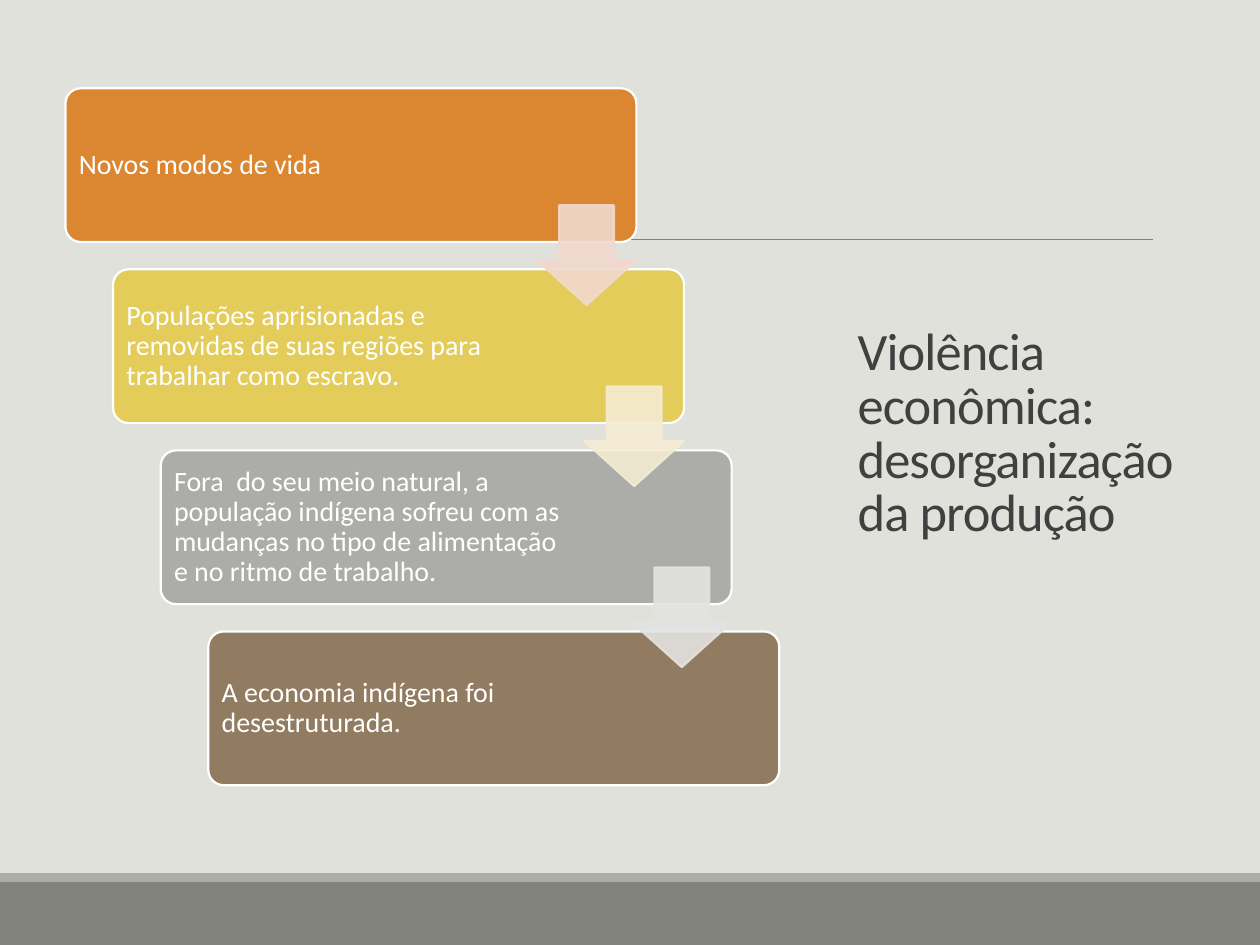
import pptx
import pptx.util
import pptx.dml.color
import pptx.enum.shapes
import pptx.enum.text
import pptx.oxml.ns
from lxml import etree

Cm, Pt = pptx.util.Cm, pptx.util.Pt
RGBColor = pptx.dml.color.RGBColor
SHAPE = pptx.enum.shapes.MSO_SHAPE
qn = pptx.oxml.ns.qn

PAPER = RGBColor(0xE1, 0xE1, 0xDB)
FOOTER = RGBColor(0x82, 0x84, 0x7C)
GRAY = RGBColor(0xAC, 0xAD, 0xA8)
RULE = RGBColor(0x80, 0x80, 0x80)
INK = RGBColor(0x40, 0x40, 0x40)
WHITE = RGBColor(0xFF, 0xFF, 0xFF)
ORANGE = RGBColor(0xDB, 0x86, 0x31)
YELLOW = RGBColor(0xE3, 0xCC, 0x5A)
BROWN = RGBColor(0x92, 0x7C, 0x61)
PALE_ORANGE = RGBColor(0xF1, 0xD9, 0xCE)
PALE_YELLOW = RGBColor(0xF4, 0xEC, 0xD2)
PALE_GRAY = RGBColor(0xE3, 0xE3, 0xE1)


class Deck:
    """Slide style and the current slide; lengths are in centimetres."""
    font = "Calibri"
    outline = 1.25

    def __init__(self, s):
        self.s = s
        s.background.fill.solid()
        s.background.fill.fore_color.rgb = PAPER

    def shape(self, kind, x, y, w, h, fill, line=None, adj=(), alpha=None):
        sp = self.s.shapes.add_shape(kind, Cm(x), Cm(y), Cm(w), Cm(h))
        sp.shadow.inherit = False
        for i, value in enumerate(adj):
            sp.adjustments[i] = value
        sp.fill.solid()
        sp.fill.fore_color.rgb = fill
        if line is None:
            sp.line.fill.background()
        else:
            sp.line.color.rgb = line
            sp.line.width = Pt(self.outline)
        if alpha is not None:
            for clr in sp._element.spPr.iter(qn("a:srgbClr")):
                etree.SubElement(clr, qn("a:alpha"), val=str(alpha * 1000))
        return sp

    def line(self, x1, y1, x2, y2, color, width):
        cn = self.s.shapes.add_connector(
            pptx.enum.shapes.MSO_CONNECTOR.STRAIGHT, Cm(x1), Cm(y1), Cm(x2), Cm(y2))
        cn.line.color.rgb = color
        cn.line.width = Pt(width)
        etree.SubElement(cn._element.spPr, qn("a:effectLst"))

    def text(self, x, y, w, h, text, size, color, leading, inset=None, spc=None):
        tf = self.s.shapes.add_textbox(Cm(x), Cm(y), Cm(w), Cm(h)).text_frame
        tf.word_wrap = True
        tf.vertical_anchor = pptx.enum.text.MSO_ANCHOR.MIDDLE
        if inset is not None:
            tf.margin_left = tf.margin_right = Cm(inset)
            tf.margin_top = tf.margin_bottom = Cm(inset)
        p = tf.paragraphs[0]
        p.line_spacing = leading
        r = p.add_run()
        r.text = text
        r.font.name = self.font
        r.font.size = Pt(size)
        r.font.color.rgb = color
        if spc is not None:
            r._r.get_or_add_rPr().set("spc", str(int(spc * 100)))


# Steps: text, card colour, text width, colour of the arrow to the next step
STEPS = [
    ("Novos modos de vida", ORANGE, 7.92, PALE_ORANGE),
    ("Populações aprisionadas e removidas de suas regiões para trabalhar como escravo.",
     YELLOW, 8.36, PALE_YELLOW),
    ("Fora  do seu meio natural, a população indígena sofreu com as mudanças "
     "no tipo de alimentação e no ritmo de trabalho.", GRAY, 8.38, PALE_GRAY),
    ("A economia indígena foi desestruturada.", BROWN, 8.36, None),
]
LEFT, TOP = 1.32, 1.78
STEP_X, STEP_Y = 0.96, 3.65
CARD_W, CARD_H = 11.51, 3.1
PAD = 0.1
ARROW = 2.01


def main():
    prs = pptx.Presentation()
    prs.slide_width, prs.slide_height = Cm(25.4), Cm(19.05)
    d = Deck(prs.slides.add_slide(prs.slide_layouts[6]))

    # Footer bands and rule
    d.shape(SHAPE.RECTANGLE, 0, 17.78, 25.4, 1.27, FOOTER)
    d.shape(SHAPE.RECTANGLE, 0, 17.6, 25.4, 0.18, GRAY)
    d.line(2.49, 4.83, 23.24, 4.83, RULE, 0.5)

    # Title
    d.text(17.04, 1.75, 7.04, 14.05, "Violência econômica: desorganização da produção",
           30, INK, 0.85, spc=-0.5)

    # Staircase of cards
    corners = [(LEFT + i * STEP_X, TOP + i * STEP_Y) for i in range(len(STEPS))]
    for (x, y), (text, color, width, _) in zip(corners, STEPS):
        d.shape(SHAPE.ROUNDED_RECTANGLE, x, y, CARD_W, CARD_H, color, WHITE, [0.1])
        d.text(x + PAD, y + PAD, width, CARD_H - 2 * PAD, text, 16, WHITE, 0.9, inset=0.17)

    # Arrows between cards, on top of them
    for (x, y), (_, _, _, pale) in zip(corners, STEPS[:-1]):
        d.shape(SHAPE.DOWN_ARROW, x + CARD_W - ARROW, y + 2.36, ARROW, ARROW,
                pale, pale, [0.55, 0.45], alpha=90)

    prs.save("out.pptx")


if __name__ == "__main__":
    main()
